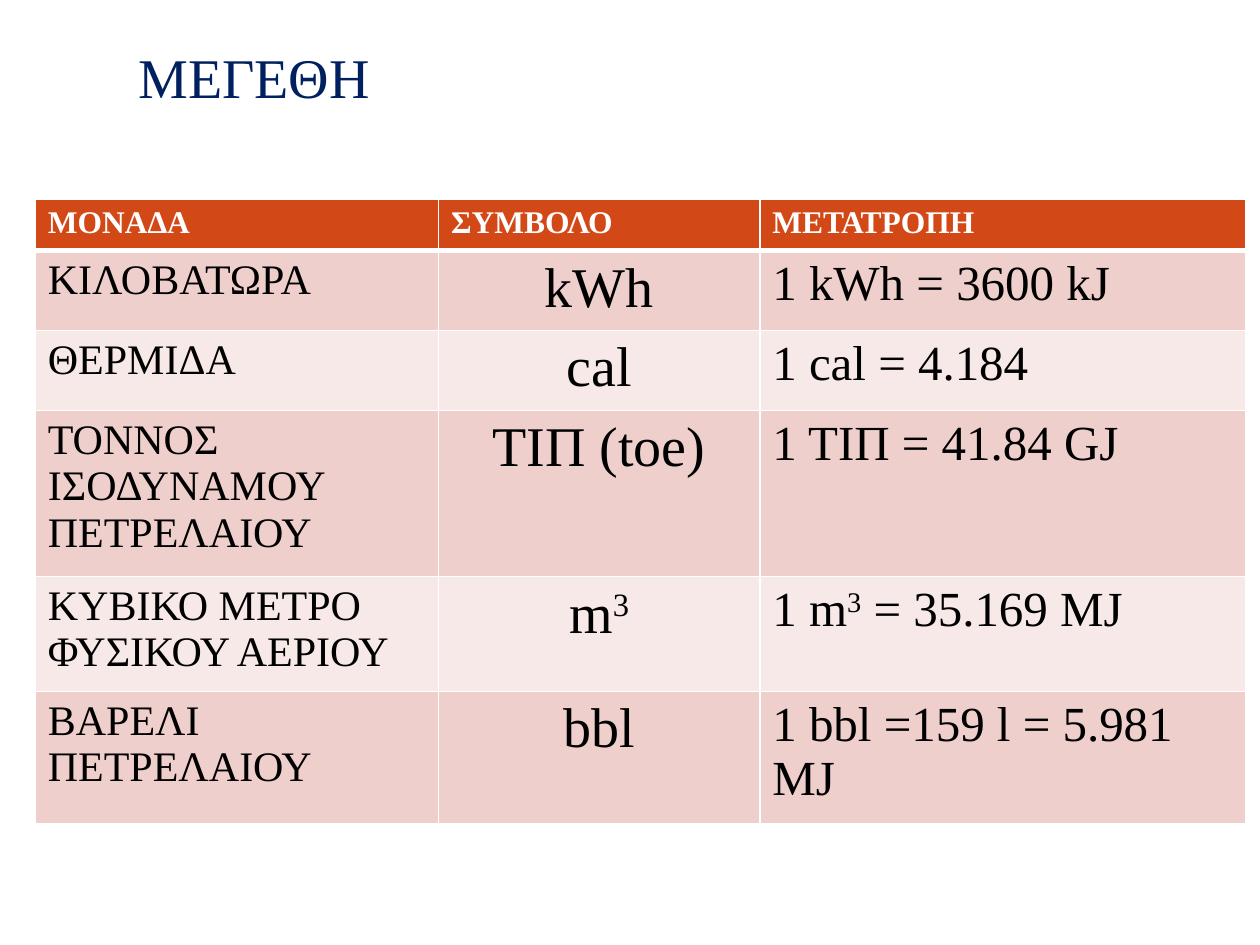
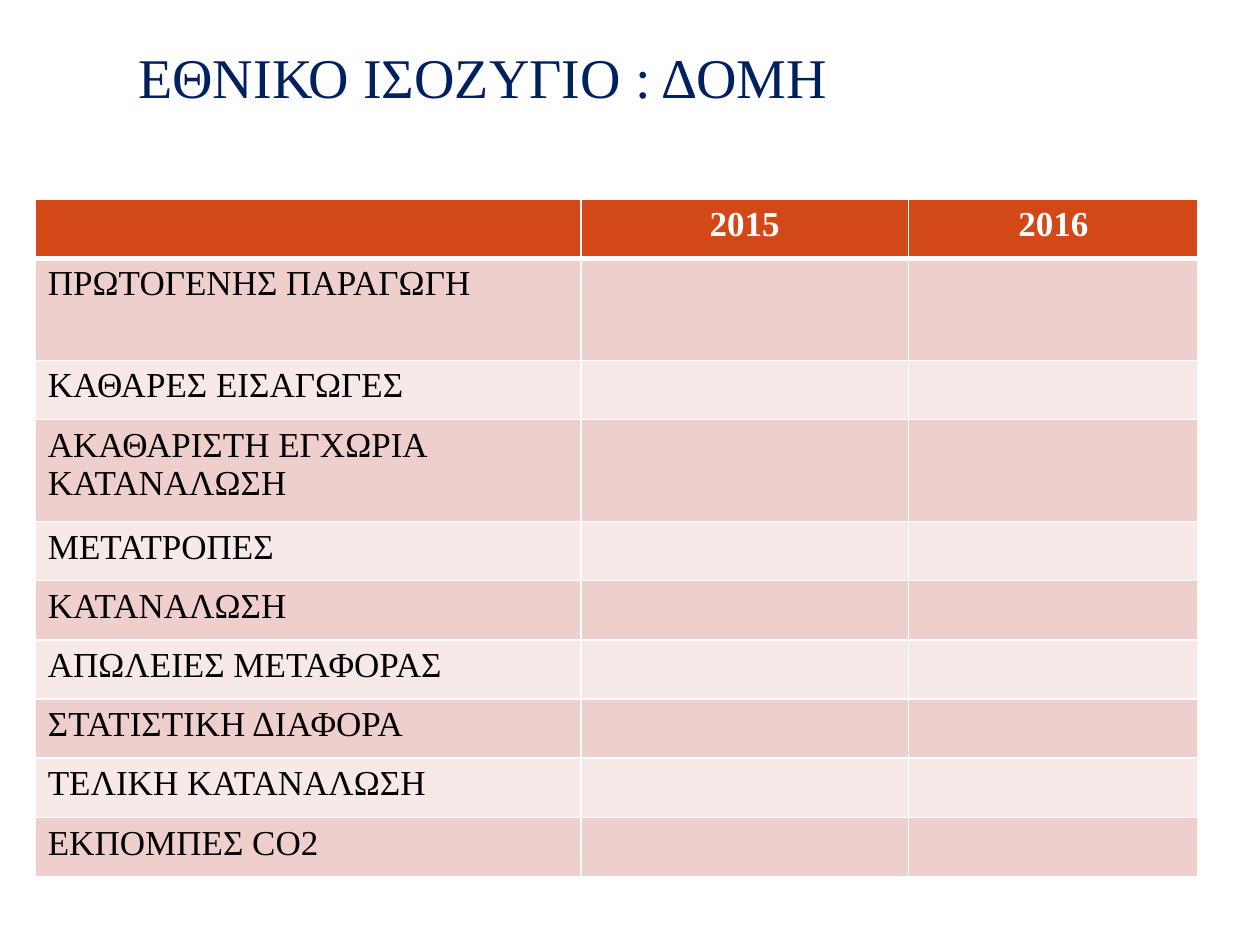
from dataclasses import dataclass

from lxml.etree import SubElement
from pptx import Presentation
from pptx.dml.color import RGBColor
from pptx.enum.text import MSO_ANCHOR, PP_ALIGN
from pptx.oxml.ns import qn
from pptx.util import Inches, Pt

FONT = "Times New Roman"
NAVY, WHITE, BLACK = "002060", "FFFFFF", "000000"
HEADER = "D34817"
BANDS = ("EFCFCC", "F7E9E8")
LEFT, CENTER = PP_ALIGN.LEFT, PP_ALIGN.CENTER


@dataclass(frozen=True)
class Column:
    width: float
    size: int
    align: PP_ALIGN = LEFT
    header_align: PP_ALIGN = LEFT


@dataclass(frozen=True)
class TableSlide:
    title: str
    header_size: int
    columns: list[Column]
    heights: list[float]
    rows: list[tuple[str, ...]]


UNITS = TableSlide(
    "ΜΕΓΕΘΗ",
    18,
    [Column(3.2, 24), Column(2.55, 32, CENTER), Column(3.86, 28)],
    [0.41, 0.58, 0.58, 1.32, 0.91, 1.05],
    [
        ("ΜΟΝΑΔΑ", "ΣΥΜΒΟΛΟ", "ΜΕΤΑΤΡΟΠΗ"),
        ("ΚΙΛΟΒΑΤΩΡΑ", "kWh", "1 kWh = 3600 kJ"),
        ("ΘΕΡΜΙΔΑ", "cal", "1 cal = 4.184"),
        ("ΤΟΝΝΟΣ ΙΣΟΔΥΝΑΜΟΥ ΠΕΤΡΕΛΑΙΟΥ", "ΤΙΠ (toe)", "1 ΤΙΠ = 41.84 GJ"),
        ("ΚΥΒΙΚΟ ΜΕΤΡΟ ΦΥΣΙΚΟΥ ΑΕΡΙΟΥ", "m^3", "1 m^3^ = 35.169 MJ"),
        ("ΒΑΡΕΛΙ ΠΕΤΡΕΛΑΙΟΥ", "bbl", "1 bbl =159 l = 5.981 MJ"),
    ],
)

BALANCE_ITEMS = [
    "ΠΡΩΤΟΓΕΝΗΣ ΠΑΡΑΓΩΓΗ",
    "ΚΑΘΑΡΕΣ ΕΙΣΑΓΩΓΕΣ",
    "ΑΚΑΘΑΡΙΣΤΗ ΕΓΧΩΡΙΑ ΚΑΤΑΝΑΛΩΣΗ",
    "ΜΕΤΑΤΡΟΠΕΣ",
    "ΚΑΤΑΝΑΛΩΣΗ",
    "ΑΠΩΛΕΙΕΣ ΜΕΤΑΦΟΡΑΣ",
    "ΣΤΑΤΙΣΤΙΚΗ ΔΙΑΦΟΡΑ",
    "ΤΕΛΙΚΗ ΚΑΤΑΝΑΛΩΣΗ",
    "ΕΚΠΟΜΠΕΣ CO2",
]

BALANCE = TableSlide(
    "ΕΘΝΙΚΟ ΙΣΟΖΥΓΙΟ : ΔΟΜΗ",
    20,
    [Column(4.33, 20), Column(2.6, 20, LEFT, CENTER), Column(2.3, 20, LEFT, CENTER)],
    [0.47, 0.81, 0.47, 0.81] + [0.47] * 6,
    [("", "2015", "2016")] + [(item, "", "") for item in BALANCE_ITEMS],
)


def rgb(color: str) -> RGBColor:
    return RGBColor.from_string(color)


def write(p, text: str, size: int, color: str, bold: bool = False, align: PP_ALIGN = LEFT) -> None:
    p.alignment = align
    p.font.name = FONT
    p.font.size = Pt(size)
    p.font.bold = bold
    p.font.color.rgb = rgb(color)
    for i, part in enumerate(text.split("^")):
        if part:
            r = p.add_run()
            r.text = part
            if i % 2:
                r.font._element.set("baseline", "30000")


def add_borders(cell, bottom: int) -> None:
    tc_pr = cell._tc.get_or_add_tcPr()
    for side, width in (("L", 1), ("R", 1), ("T", 1), ("B", bottom)):
        ln = SubElement(tc_pr, qn(f"a:ln{side}"), w=str(Pt(width)))
        SubElement(SubElement(ln, qn("a:solidFill")), qn("a:srgbClr"), val=WHITE)


def add_title(s, text: str) -> None:
    tf = s.shapes.add_textbox(Inches(1), Inches(0.3), Inches(8.5), Inches(0.61)).text_frame
    tf.word_wrap = True
    tf.vertical_anchor = MSO_ANCHOR.MIDDLE
    write(tf.paragraphs[0], text, 32, NAVY)


def add_grid(s, data: TableSlide) -> None:
    width = sum(column.width for column in data.columns)
    table = s.shapes.add_table(
        len(data.rows), len(data.columns),
        Inches(0.28), Inches(1.58), Inches(width), Inches(sum(data.heights)),
    ).table
    for c, column in enumerate(data.columns):
        table.columns[c].width = Inches(column.width)
    for r, (height, texts) in enumerate(zip(data.heights, data.rows)):
        table.rows[r].height = Inches(height)
        is_header = r == 0
        for c, (column, text) in enumerate(zip(data.columns, texts)):
            cell = table.cell(r, c)
            add_borders(cell, 3 if is_header else 1)
            cell.fill.solid()
            cell.fill.fore_color.rgb = rgb(HEADER if is_header else BANDS[(r - 1) % 2])
            p = cell.text_frame.paragraphs[0]
            if is_header:
                write(p, text, data.header_size, WHITE, True, column.header_align)
            else:
                write(p, text, column.size, BLACK, False, column.align)


def main() -> None:
    prs = Presentation()
    prs.slide_width, prs.slide_height = Inches(10), Inches(7.5)
    for data in (UNITS, BALANCE):
        s = prs.slides.add_slide(prs.slide_layouts[6])
        add_title(s, data.title)
        add_grid(s, data)
    prs.save("out.pptx")


if __name__ == "__main__":
    main()
